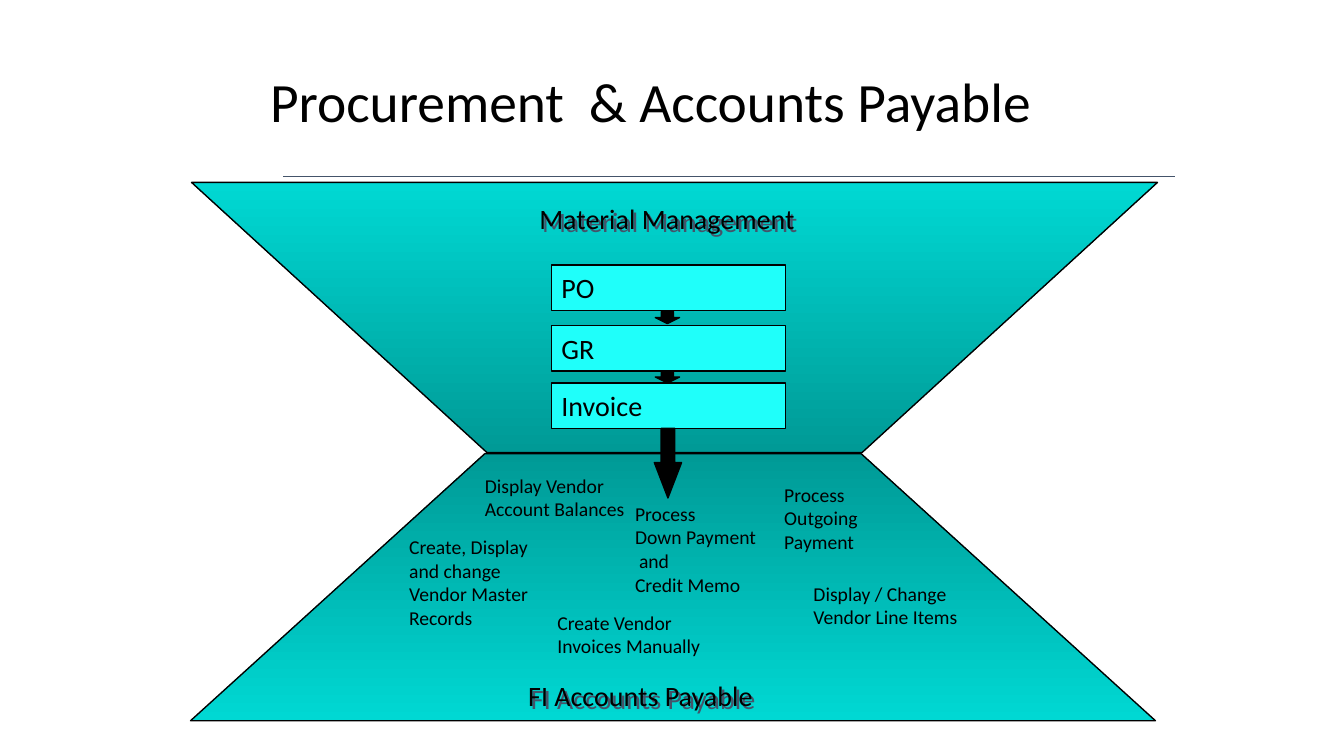
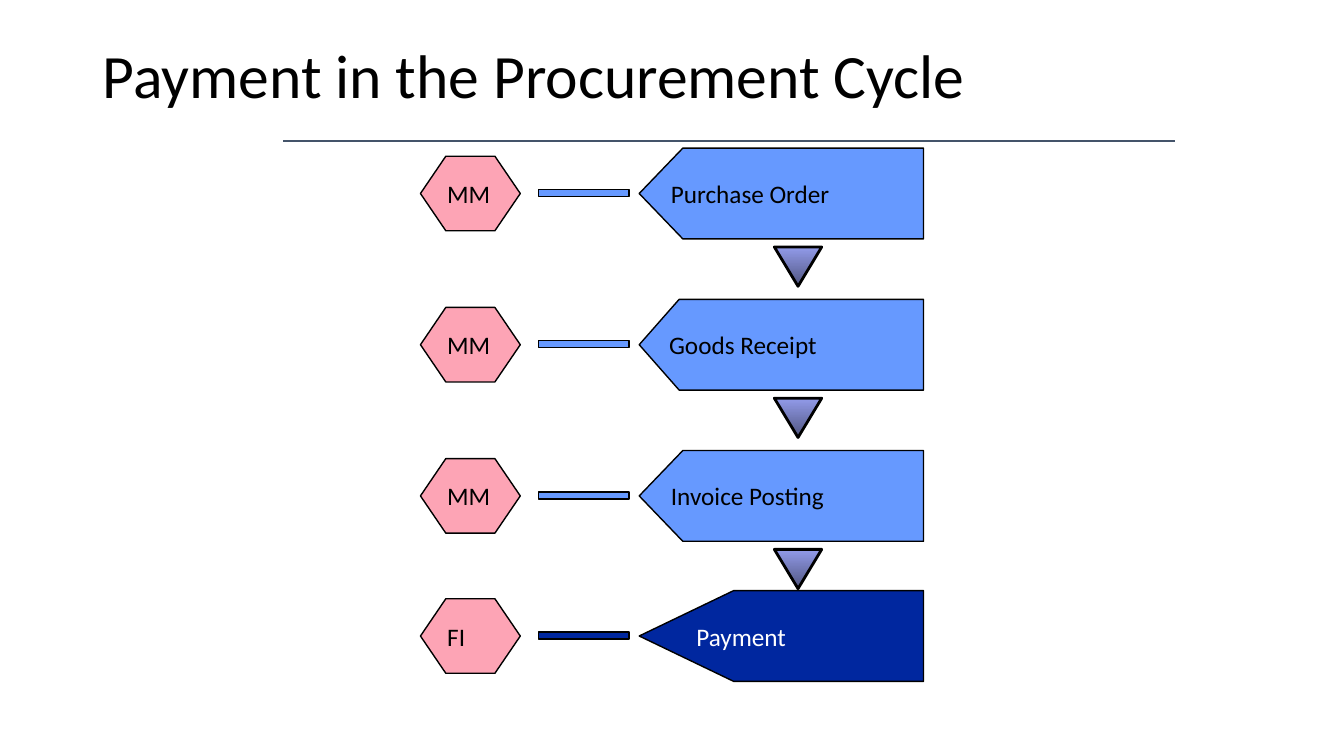
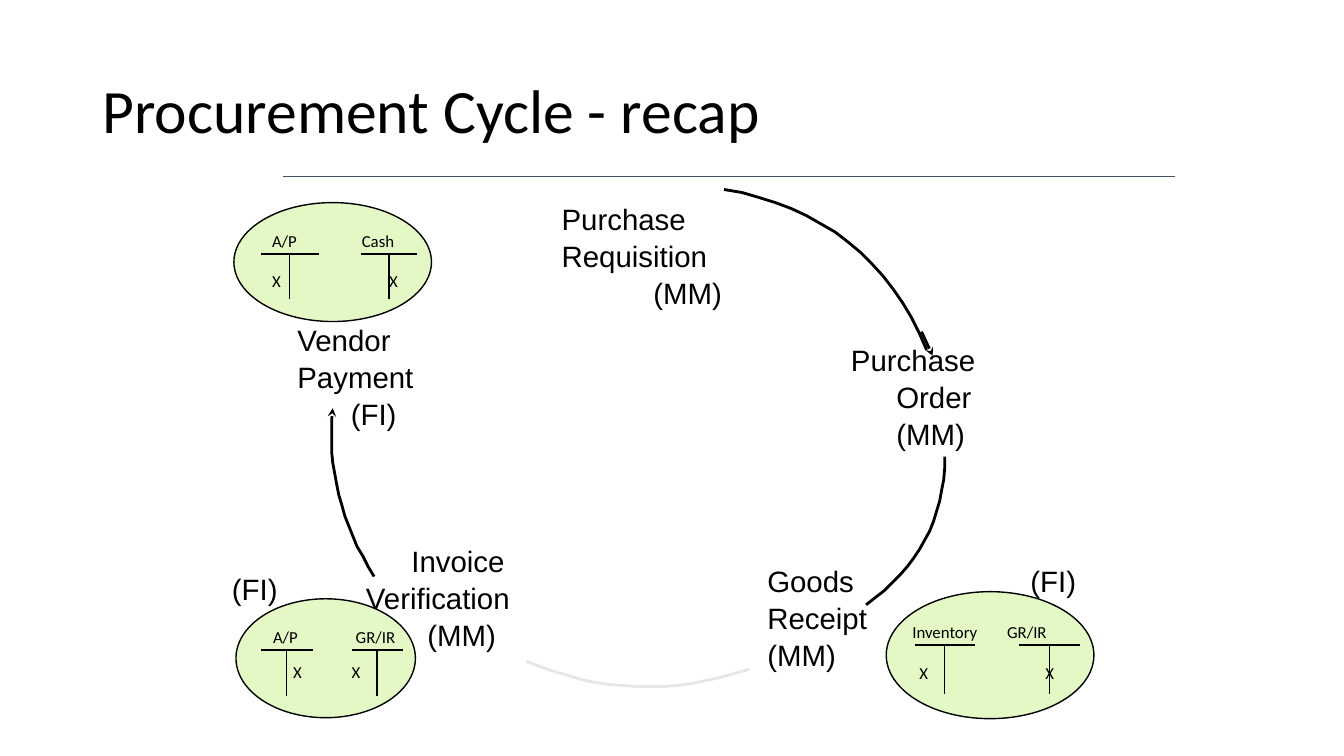
import pptx
import pptx.dml.color
import pptx.enum.shapes
import pptx.enum.text
import pptx.oxml
import pptx.oxml.ns
import pptx.util
from lxml import etree

SCALE = 9144  # EMU per px: 100 px to the inch
SHAPES = pptx.enum.shapes.MSO_SHAPE
ANCHOR = pptx.enum.text.MSO_ANCHOR
qn = pptx.oxml.ns.qn

BLACK, WHITE = "000000", "FFFFFF"
SLATE, PALE_GREY = "44546A", "E7E6E6"
TEAL_LIGHT, TEAL_DARK, CYAN = "00D8D3", "009A96", "1FFFFA"
BLUE, NAVY, PINK, LIME = "6699FF", "00279F", "FDA4B5", "E3F8C5"
LILAC, DUSK = "929BEA", "505580"


def px(length):
    return pptx.util.Emu(round(length * SCALE))


def rgb(colour):
    return pptx.dml.color.RGBColor.from_string(colour)


class Deck:
    font = "Calibri"

    def __init__(self):
        self.prs = pptx.Presentation()
        self.prs.slide_width, self.prs.slide_height = px(1333), px(750)
        self.slide = None

    def new_slide(self, title, box=(92, 40, 1150, 145), size=44, rule_y=175):
        """Start a slide with its title and the rule below it."""
        self.slide = self.prs.slides.add_slide(self.prs.slide_layouts[6])
        self.text(*box, [title], size, spacing=0.9, anchor=ANCHOR.MIDDLE)
        self.line((281, rule_y), (1165, rule_y), SLATE)

    def set_lines(self, frame, lines, size, colour=BLACK, font=None, spacing=None):
        """Fill a frame; a line is a string or a (string, indent) pair."""
        for i, line in enumerate(lines):
            words, indent = (line, 0) if isinstance(line, str) else line
            para = frame.paragraphs[0] if i == 0 else frame.add_paragraph()
            para.text = words
            para.alignment = pptx.enum.text.PP_ALIGN.LEFT
            para.font.name = font or self.font
            para.font.size = pptx.util.Pt(size)
            para.font.color.rgb = rgb(colour)
            if spacing:
                para.line_spacing = spacing
            if indent:
                para._p.get_or_add_pPr().set("marL", str(px(indent)))

    def text(self, x, y, w, h, lines, size, font=None, spacing=None,
             inset=True, anchor=ANCHOR.TOP):
        box = self.slide.shapes.add_textbox(px(x), px(y), px(w), px(h))
        frame = box.text_frame
        frame.word_wrap = True
        frame.vertical_anchor = anchor
        if not inset:
            frame.margin_left = frame.margin_right = 0
            frame.margin_top = frame.margin_bottom = 0
        self.set_lines(frame, lines, size, font=font, spacing=spacing)
        return box

    def heading(self, x, y, w, words):
        """Text with a drop shadow."""
        box = self.text(x, y, w, 44, [words], 20)
        effects = etree.SubElement(box._element.spPr, qn("a:effectLst"))
        shadow = etree.SubElement(effects, qn("a:outerShdw"),
                                  dist="35921", dir="2700000", algn="ctr", rotWithShape="0")
        etree.SubElement(shadow, qn("a:srgbClr"), val=SLATE)

    def paint(self, shape, fill, line=BLACK, width=1):
        """Fill is a colour, a (bottom, top) pair or None."""
        shape.shadow.inherit = False
        if fill is None:
            shape.fill.background()
        elif isinstance(fill, tuple):
            shape.fill.gradient()
            shape.fill.gradient_angle = 90
            for stop, colour in zip(shape.fill.gradient_stops, fill):
                stop.color.rgb = rgb(colour)
        else:
            shape.fill.solid()
            shape.fill.fore_color.rgb = rgb(fill)
        shape.line.color.rgb = rgb(line)
        shape.line.width = pptx.util.Pt(width)

    def shape(self, kind, x, y, w, h, fill, adjust=(), width=1, words=None,
              size=18, colour=BLACK, flip=False):
        shape = self.slide.shapes.add_shape(kind, px(x), px(y), px(w), px(h))
        for i, value in enumerate(adjust):
            shape.adjustments[i] = value
        self.paint(shape, fill, width=width)
        if flip:
            shape._element.spPr.get_or_add_xfrm().set("flipH", "1")
        if words:
            frame = shape.text_frame
            frame.word_wrap = False
            frame.vertical_anchor = ANCHOR.MIDDLE
            self.set_lines(frame, [words], size, colour)
        return shape

    def outline(self, points, fill=None, line=BLACK, width=1, close=True):
        builder = self.slide.shapes.build_freeform(*points[0], scale=SCALE)
        builder.add_line_segments(points[1:], close=close)
        shape = builder.convert_to_shape()
        self.paint(shape, fill, line, width)
        return shape

    def arc(self, start, middle, end, line=BLACK, steps=16):
        """Smooth open curve through three points."""
        bend = [2 * m - (s + e) / 2 for s, m, e in zip(start, middle, end)]
        points = []
        for i in range(steps + 1):
            t = i / steps
            points.append([(1 - t) ** 2 * s + 2 * t * (1 - t) * b + t * t * e
                           for s, b, e in zip(start, bend, end)])
        return self.outline(points, line=line, width=2, close=False)

    def line(self, start, end, colour=BLACK, width=1):
        line = self.slide.shapes.add_connector(
            pptx.enum.shapes.MSO_CONNECTOR.STRAIGHT, *map(px, start + end))
        line.line.color.rgb = rgb(colour)
        line.line.width = pptx.util.Pt(width)
        etree.SubElement(line._element.spPr, qn("a:effectLst"))
        return line

    def arrowhead(self, shape, end):
        """End is headEnd (at the start point) or tailEnd."""
        etree.SubElement(shape._element.spPr.find(qn("a:ln")), qn("a:" + end), type="stealth")

    def account(self, name, name_x, bar_x, bar_y, bar_w, stem, mark_x, mark_y):
        """T-account with its name above and an X on one side."""
        middle = bar_x + bar_w // 2
        self.line((bar_x, bar_y), (bar_x + bar_w, bar_y))
        self.line((middle, bar_y), (middle, bar_y + stem))
        self.text(name_x, bar_y - 28, 95, 30, [name], 12)
        self.text(mark_x, mark_y, 32, 30, ["X"], 12)


def procurement_and_payable(deck):
    deck.new_slide("Procurement  & Accounts Payable", (258, 41, 843, 125), 39.6)
    deck.outline([(190, 181), (1148, 181), (855, 449), (483, 449)], (TEAL_DARK, TEAL_LIGHT))
    deck.outline([(189, 715), (481, 450), (854, 450), (1146, 715)], (TEAL_LIGHT, TEAL_DARK))
    for words, y in (("PO", 263), ("GR", 323), ("Invoice", 380)):
        deck.shape(SHAPES.RECTANGLE, 547, y, 232, 45, CYAN, words=words, size=20)
    for x, y, w, h, head in ((650, 309, 24, 12, 0.5), (650, 368, 24, 12, 0.5),
                             (649, 425, 27, 69, 1.3)):
        deck.shape(SHAPES.DOWN_ARROW, x, y, w, h, BLACK, (0.5, head))
    tasks = (
        (396, 526, 150, ["Create, Display", "and change", "Vendor Master", "Records"]),
        (471, 465, 166, ["Display Vendor", "Account Balances"]),
        (768, 474, 100, ["Process\vOutgoing", "Payment"]),
        (797, 572, 170, ["Display / Change", "Vendor Line Items"]),
        (543, 601, 174, ["Create Vendor", "Invoices Manually"]),
        (620, 493, 147, ["Process\vDown Payment", ("and", 4), "Credit Memo"]),
    )
    for x, y, w, lines in tasks:
        deck.text(x, y, w, 104 if len(lines) > 2 else 57, lines, 14)
    deck.heading(525, 195, 282, "Material Management")
    deck.heading(514, 668, 251, "FI Accounts Payable")


def payment_cycle(deck):
    deck.new_slide("Payment in the Procurement Cycle", (92, 5, 1150, 145), rule_y=140)
    steps = (
        (147, "MM", "Purchase Order", 0.48, BLUE, BLACK),
        (297, "MM", "Goods Receipt", 0.44, BLUE, BLACK),
        (447, "MM", "Invoice Posting", 0.48, BLUE, BLACK),
        (586, "FI", "Payment", 1.04, NAVY, WHITE),
    )
    for y, module, step, point, fill, colour in steps:
        deck.shape(SHAPES.PENTAGON, 634, y, 282, 90, fill, (point,),
                   words=step, colour=colour, flip=True)
        deck.shape(SHAPES.HEXAGON, 417, y + 8, 99, 74, PINK, (0.34,), words=module)
        deck.shape(SHAPES.RECTANGLE, 534, y + 41, 90, 7, fill)
    for y, *_ in steps[:-1]:
        pointer = deck.shape(SHAPES.ISOSCELES_TRIANGLE, 768, y + 98, 47, 39,
                             (LILAC, DUSK), width=2)
        pointer.rotation = 180


def cycle_recap(deck):
    deck.new_slide("Procurement Cycle - recap")
    for x, y, w, h in ((232, 201, 196, 118), (879, 587, 206, 126), (234, 594, 178, 118)):
        deck.shape(SHAPES.OVAL, x, y, w, h, LIME)

    stages = (
        (557, 198, 192, ["Purchase", "Requisition", ("(MM)", 91)]),
        (844, 338, 159, ["Purchase", ("Order", 45), ("(MM)", 45)]),
        (761, 557, 155, ["Goods", "Receipt", "(MM)"]),
        (363, 537, 192, [("Invoice", 45), "Verification", ("(MM)", 61)]),
        (295, 318, 146, ["Vendor", "Payment", ("(FI)", 53)]),
        (230, 565, 61, ["(FI)"]),
        (1022, 557, 61, ["(FI)"]),
    )
    for x, y, w, lines in stages:
        deck.text(x, y, w, 35 * len(lines), lines, 21, "Arial", 1.05, inset=False)

    deck.arc((522, 656), (631, 681), (743, 664), PALE_GREY)
    to_payment = deck.arc((330, 405), (336, 491), (371, 572))
    deck.arrowhead(to_payment, "headEnd")
    deck.arc((919, 347), (841, 240), (718, 188))
    deck.arc((859, 600), (917, 536), (937, 453))
    to_order = deck.line((914, 329), (925, 353), width=2)
    deck.arrowhead(to_order, "tailEnd")

    accounts = (
        ("A/P", 260, 259, 252, 57, 45, 260, 264),
        ("Cash", 349, 358, 252, 56, 45, 376, 264),
        ("Inventory", 895, 908, 640, 59, 49, 902, 653),
        ("GR/IR", 989, 1011, 640, 60, 49, 1027, 653),
        ("A/P", 261, 259, 645, 51, 45, 281, 652),
        ("GR/IR", 343, 349, 645, 51, 45, 339, 652),
    )
    for account in accounts:
        deck.account(*account)


def main():
    deck = Deck()
    procurement_and_payable(deck)
    payment_cycle(deck)
    cycle_recap(deck)
    deck.prs.save("out.pptx")


if __name__ == "__main__":
    main()
